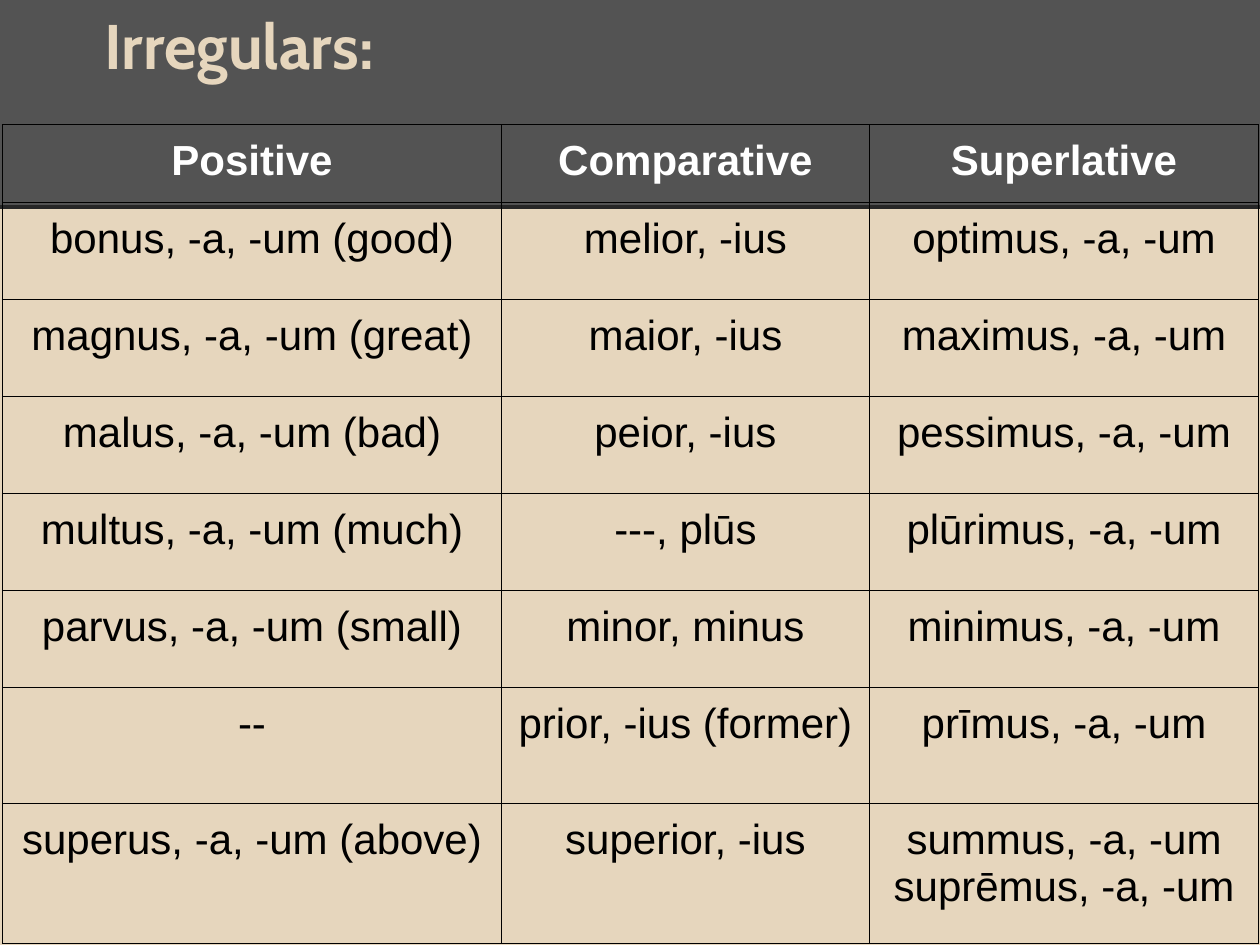
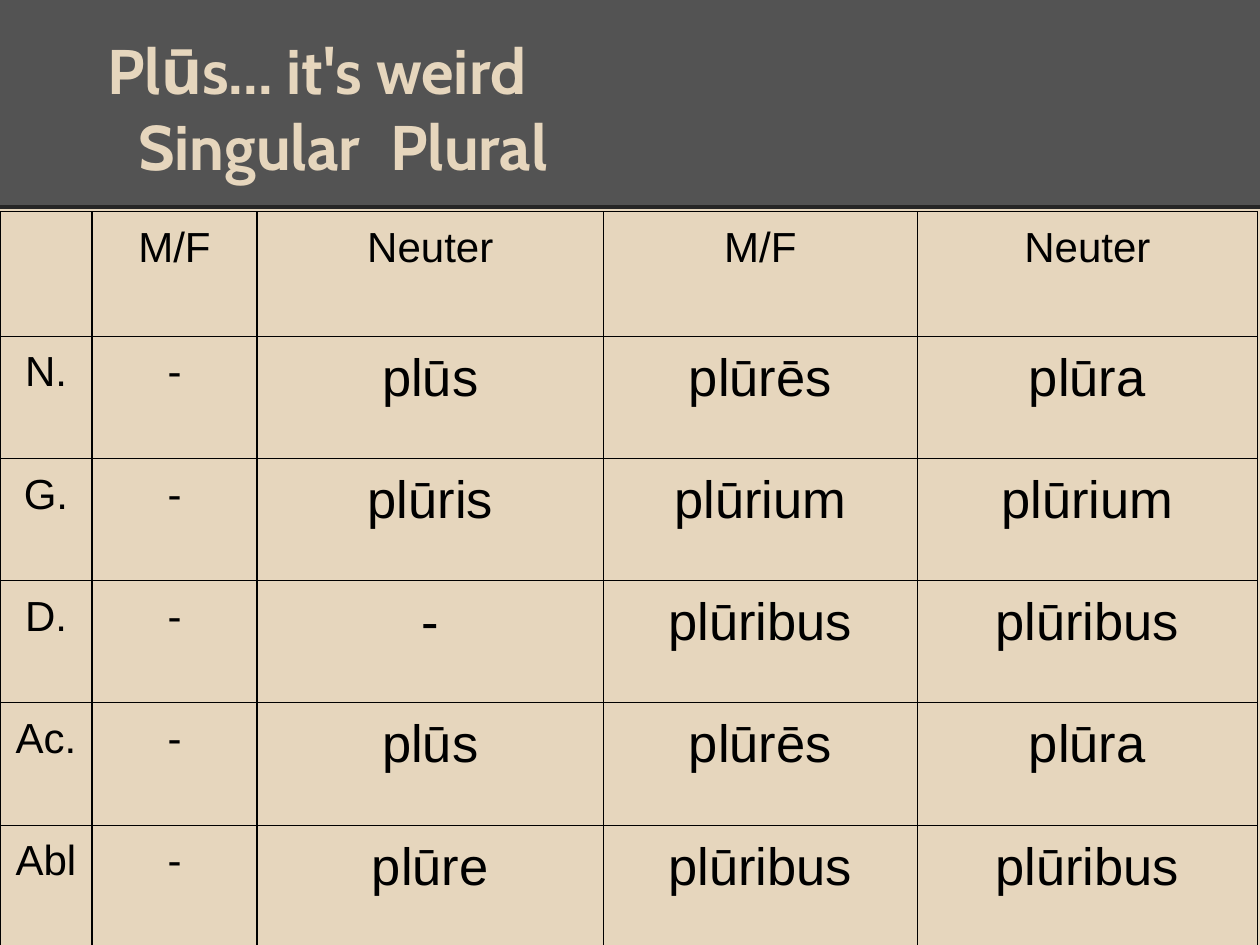
from lxml import etree
from pptx import Presentation
from pptx.dml.color import RGBColor
from pptx.enum import shapes, text
from pptx.oxml import ns
from pptx.util import Inches, Pt

COLOURS = {
    "sand": "E6D6BD",
    "band": "535353",
    "edge": "262626",
    "white": "FFFFFF",
    "black": "000000",
}
SLIDE_WIDTH, SLIDE_HEIGHT, BAND_HEIGHT = 10, 7.5, 1.64
INSET = 0.1

COMPARISONS = [
    ("Positive", "Comparative", "Superlative"),
    ("bonus, -a, -um (good)", "melior, -ius", "optimus, -a, -um"),
    ("magnus, -a, -um (great)", "maior, -ius", "maximus, -a, -um"),
    ("malus, -a, -um (bad)", "peior, -ius", "pessimus, -a, -um"),
    ("multus, -a, -um (much)", "---, plūs", "plūrimus, -a, -um"),
    ("parvus, -a, -um (small)", "minor, minus", "minimus, -a, -um"),
    ("--", "prior, -ius (former)", "prīmus, -a, -um"),
    ("superus, -a, -um (above)", "superior, -ius", "summus, -a, -um\nsuprēmus, -a, -um"),
]
DECLENSION = [
    ("", "M/F", "Neuter", "M/F", "Neuter"),
    ("N.", "-", "plūs", "plūrēs", "plūra"),
    ("G.", "-", "plūris", "plūrium", "plūrium"),
    ("D.", "-", "-", "plūribus", "plūribus"),
    ("Ac.", "-", "plūs", "plūrēs", "plūra"),
    ("Abl", "-", "plūre", "plūribus", "plūribus"),
]


def colour(name):
    """Return the named colour."""
    return RGBColor.from_string(COLOURS[name])


def add_span(para, words, font, size, shade, bold=False):
    """Add one formatted run to a paragraph."""
    span = para.add_run()
    span.text = words
    span.font.name = font
    span.font.size = Pt(size)
    span.font.bold = bold
    span.font.color.rgb = colour(shade)


def set_insets(box):
    """Give a text frame or a cell equal margins."""
    box.margin_left = box.margin_right = Inches(INSET)
    box.margin_top = box.margin_bottom = Inches(INSET)


def add_band(page):
    """Draw the title band and its edge, and hand them to the page's layout."""
    band = page.shapes.add_shape(
        shapes.MSO_SHAPE.RECTANGLE, 0, 0, Inches(SLIDE_WIDTH), Inches(BAND_HEIGHT))
    band.shadow.inherit = False
    band.fill.solid()
    band.fill.fore_color.rgb = colour("band")
    band.line.fill.background()
    edge = page.shapes.add_connector(
        shapes.MSO_CONNECTOR.STRAIGHT,
        0, Inches(BAND_HEIGHT), Inches(SLIDE_WIDTH), Inches(BAND_HEIGHT))
    edge.line.color.rgb = colour("edge")
    edge.line.width = Pt(2.25)
    etree.SubElement(edge._element.spPr, ns.qn("a:effectLst"))
    tree = page.slide_layout.shapes._spTree
    for index, part in enumerate((band, edge), start=2):
        tree.insert(index, part._element)


def add_title(page, box, lines, tabs=()):
    """Place the title and write its lines, with tab stops in inches."""
    title = page.shapes.title
    title.left, title.top, title.width, title.height = map(Inches, box)
    frame = title.text_frame
    frame.word_wrap = True
    frame.auto_size = text.MSO_AUTO_SIZE.NONE
    frame.vertical_anchor = text.MSO_ANCHOR.BOTTOM
    set_insets(frame)
    for index, line in enumerate(lines):
        para = frame.add_paragraph() if index else frame.paragraphs[0]
        para.alignment = text.PP_ALIGN.LEFT
        properties = para._p.get_or_add_pPr()
        properties.set("marL", "0")
        properties.set("indent", str(Inches(0.25)))
        if tabs:
            stops = etree.SubElement(properties, ns.qn("a:tabLst"))
            for tab in tabs:
                etree.SubElement(stops, ns.qn("a:tab"), pos=str(Inches(tab)), algn="l")
        add_span(para, line, "Cabin", 36, "sand", True)


def format_cell(cell, words, size, shade, bold):
    """Write a centred cell with thin borders and no fill."""
    set_insets(cell)
    properties = cell._tc.get_or_add_tcPr()
    for side in ("lnL", "lnR", "lnT", "lnB"):
        border = etree.SubElement(properties, ns.qn(f"a:{side}"), w=str(Pt(0.75)))
        fill = etree.SubElement(border, ns.qn("a:solidFill"))
        etree.SubElement(fill, ns.qn("a:srgbClr"), val=COLOURS["black"])
    cell.fill.background()
    for index, line in enumerate(words.split("\n") if words else ()):
        frame = cell.text_frame
        para = frame.add_paragraph() if index else frame.paragraphs[0]
        para.alignment = text.PP_ALIGN.CENTER
        add_span(para, line, "Arial", size, shade, bold)


def add_grid(page, left, top, widths, heights, rows, style):
    """Add a table; style gives size, colour and weight for a row and column."""
    table = page.shapes.add_table(
        len(heights), len(widths), Inches(left), Inches(top),
        Inches(sum(widths)), Inches(sum(heights))).table
    table.first_row = table.horz_banding = False
    for column, width in zip(table.columns, widths):
        column.width = Inches(width)
    for row, height in zip(table.rows, heights):
        row.height = Inches(height)
    for row, entries in enumerate(rows):
        for column, words in enumerate(entries):
            format_cell(table.cell(row, column), words, *style(row, column))


def comparison_style(row, column):
    """Make the heading row white and bold."""
    return (24, "black", False) if row else (24, "white", True)


def declension_style(row, column):
    """Make the declined forms larger than their labels."""
    return (30 if row and column > 1 else 24, "black", False)


def build_irregulars(page):
    """Build the table of irregular comparisons."""
    add_title(page, (0.48, 0, 9, 0.75), ["Irregulars:"])
    add_grid(page, 0.02, 0.99, [3.96, 2.92, 3.09],
             [0.62] + [0.77] * 5 + [0.92, 1.11], COMPARISONS, comparison_style)


def build_plus(page):
    """Build the declension table of plūs."""
    add_title(page, (0.5, 0.3, 9, 1.25),
              ["Plūs... it's weird", "\tSingular\tPlural"], tabs=(1, 6))
    add_grid(page, 0, 1.68, [0.73, 1.31, 2.75, 2.49, 2.7],
             [0.99] + [0.97] * 5, DECLENSION, declension_style)


def main():
    """Build and save the deck."""
    deck = Presentation()
    deck.slide_width, deck.slide_height = Inches(SLIDE_WIDTH), Inches(SLIDE_HEIGHT)
    background = deck.slide_master.background.fill
    background.solid()
    background.fore_color.rgb = colour("sand")
    layout = deck.slide_layouts.get_by_name("Title Only")
    pages = [deck.slides.add_slide(layout) for _ in range(2)]
    add_band(pages[0])
    for build, page in zip((build_irregulars, build_plus), pages):
        build(page)
    deck.save("out.pptx")


if __name__ == "__main__":
    main()
